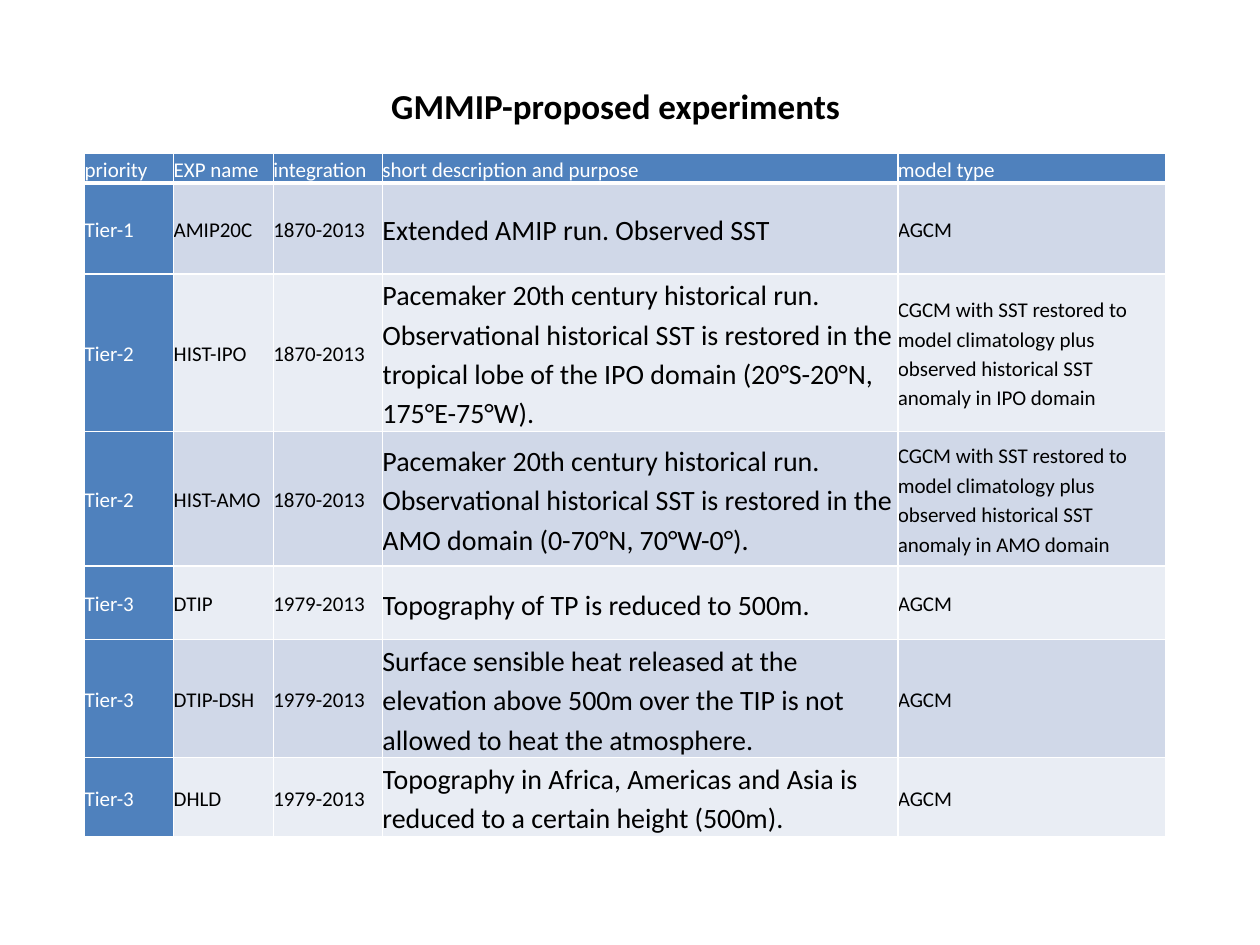
from lxml import etree
from pptx import Presentation
from pptx import util as u
from pptx.dml.color import RGBColor
from pptx.enum import text as t
from pptx.oxml.ns import qn

HUES = {"head": "4F81BD", "odd": "D0D8E8", "even": "E9EDF4",
        "white": "FFFFFF", "black": "000000"}

COLS = [50.9, 56.9, 62.4, 294.5, 153.1]
HEIGHTS = [8, 52, 87, 77, 42, 47, 42]

PACE = ("Pacemaker 20th century historical run. Observational historical SST "
        "is restored in the {}.")
CGCM = ("CGCM with SST restored to model climatology plus observed historical "
        "SST anomaly in {} domain")
ROWS = [
    ["priority", "EXP name", "integration", "short description and purpose",
     "model type"],
    ["Tier-1", "AMIP20C", "1870-2013", "Extended AMIP run. Observed SST", "AGCM"],
    ["Tier-2", "HIST-IPO", "1870-2013",
     PACE.format("tropical lobe of the IPO domain (20°S-20°N, 175°E-75°W)"),
     CGCM.format("IPO")],
    ["Tier-2", "HIST-AMO", "1870-2013",
     PACE.format("AMO domain (0-70°N, 70°W-0°)"), CGCM.format("AMO")],
    ["Tier-3", "DTIP", "1979-2013", "Topography of TP is reduced to 500m.", "AGCM"],
    ["Tier-3", "DTIP-DSH", "1979-2013",
     "Surface sensible heat released at the elevation above 500m over the TIP "
     "is not allowed to heat the atmosphere.", "AGCM"],
    ["Tier-3", "DHLD", "1979-2013",
     "Topography in Africa, Americas and Asia is reduced to a certain height "
     "(500m).", "AGCM"],
]


def hue(name):
    return RGBColor.from_string(HUES[name])


def write(frame, words, size=12, color="black", bold=False, font="Calibri",
          lead=None, after=None):
    para = frame.paragraphs[0]
    para.line_spacing = lead
    if after is not None:
        para.space_after = u.Pt(after)
    run = para.add_run()
    run.text = words
    run.font.name, run.font.size, run.font.bold = font, u.Pt(size), bold
    run.font.color.rgb = hue(color)


def edge(cell, base):
    """Draw white cell borders; base is the width of the bottom one."""
    props = cell._tc.get_or_add_tcPr()
    for side, wide in zip("LRTB", (1, 1, 1, base)):
        line = etree.SubElement(props, qn(f"a:ln{side}"), w=str(u.Pt(wide)))
        fill = etree.SubElement(line, qn("a:solidFill"))
        etree.SubElement(fill, qn("a:srgbClr"), val=HUES["white"])


class Deck:
    def __init__(self, wide, high):
        self.prs = Presentation()
        self.prs.slide_width, self.prs.slide_height = u.Pt(wide), u.Pt(high)
        self.slide = self.prs.slides.add_slide(self.prs.slide_layouts[6])

    def label(self, words, x, y, w, h, **style):
        frame = self.slide.shapes.add_textbox(
            u.Pt(x), u.Pt(y), u.Pt(w), u.Pt(h)).text_frame
        frame.word_wrap = False
        frame.auto_size = t.MSO_AUTO_SIZE.SHAPE_TO_FIT_TEXT
        write(frame, words, **style)

    def cell(self, cell, words, row, col):
        head = row == 0 or col == 0
        cell.margin_left = cell.margin_right = 0
        cell.margin_top = cell.margin_bottom = 0
        cell.vertical_anchor = t.MSO_ANCHOR.MIDDLE
        edge(cell, 3 if row == 0 else 1)
        cell.fill.solid()
        cell.fill.fore_color.rgb = hue(
            "head" if head else "odd" if row % 2 else "even")
        write(cell.text_frame, words, size=16 if row and col == 3 else 12,
              color="white" if head else "black", lead=1.15, after=10)

    def table(self, rows, cols, heights, x, y, high):
        shape = self.slide.shapes.add_table(
            len(rows), len(cols), u.Pt(x), u.Pt(y), u.Pt(sum(cols)), u.Pt(high))
        grid = shape.table
        grid.first_col = True
        for col, wide in zip(grid.columns, cols):
            col.width = u.Pt(wide)
        for row, tall in zip(grid.rows, heights):
            row.height = u.Pt(tall)
        shape.height = u.Pt(high)
        for r, line in enumerate(rows):
            for c, words in enumerate(line):
                self.cell(grid.cell(r, c), words, r, c)


def main():
    deck = Deck(720, 540)
    deck.table(ROWS, COLS, HEIGHTS, 48.4, 87.8, 387.4)
    deck.label("GMMIP-proposed experiments", 216.5, 45, 273.6, 31.5,
               size=20, bold=True)
    deck.prs.save("out.pptx")


if __name__ == "__main__":
    main()
